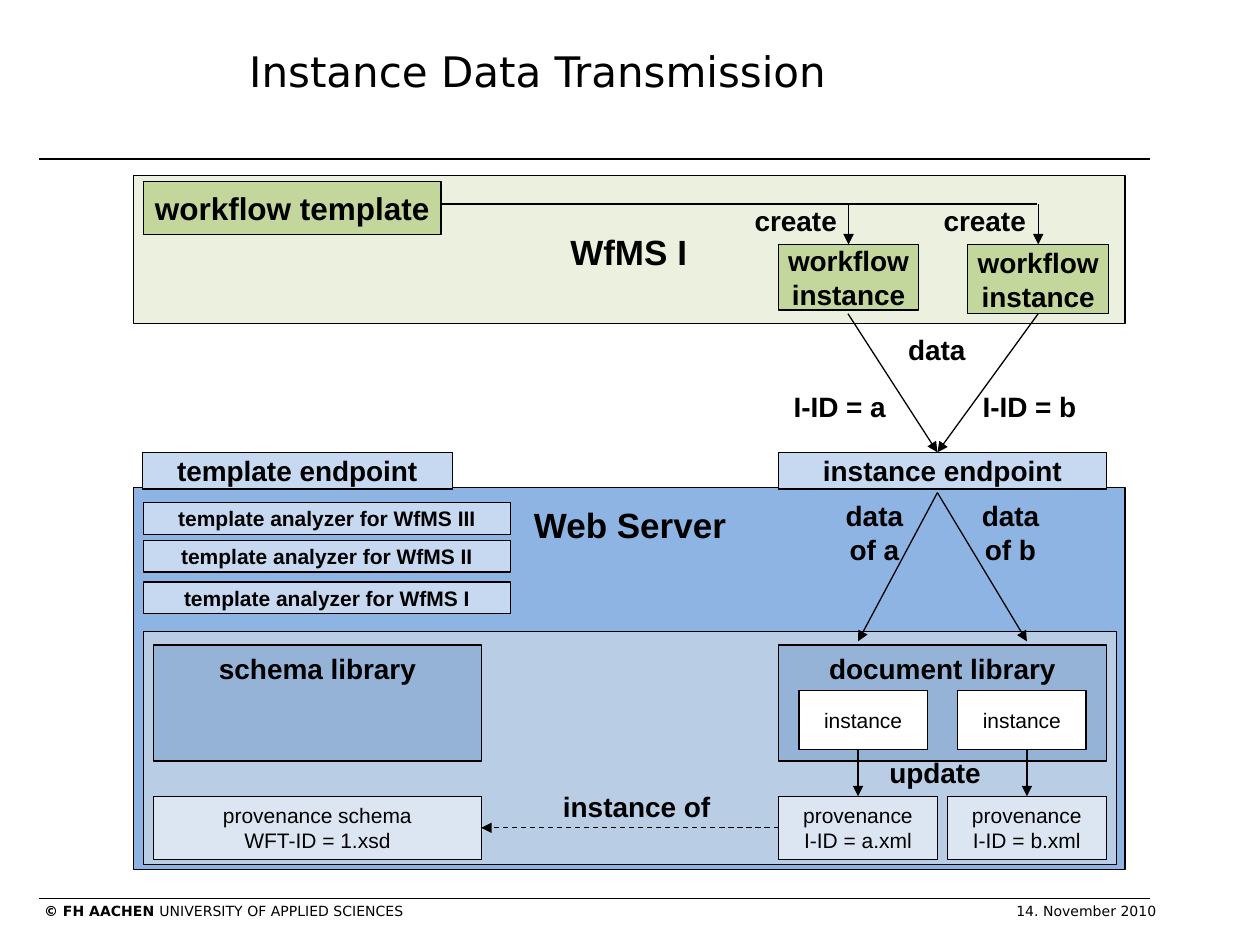
from lxml import etree
from pptx import Presentation
from pptx.dml.color import RGBColor
from pptx.enum.dml import MSO_LINE_DASH_STYLE as DASH
from pptx.enum.shapes import MSO_CONNECTOR, MSO_SHAPE
from pptx.enum.text import MSO_ANCHOR, PP_ALIGN
from pptx.oxml.ns import qn
from pptx.util import Inches, Pt

COLORS = {
    "black": "000000", "white": "FFFFFF",
    "wfms": "EBF1DE", "workflow": "C3D69B",
    "server": "8EB4E3", "endpoint": "C6D9F1",
    "store": "B9CDE5", "library": "95B3D7", "provenance": "DCE6F2",
}


def rgb(name):
    """Return the named colour."""
    return RGBColor.from_string(COLORS[name])


def add_run(p, text, size, bold, font="Arial"):
    """Append one formatted run to a paragraph."""
    r = p.add_run()
    r.text = text
    r.font.size, r.font.bold, r.font.name = Pt(size), bold, font
    r.font.color.rgb = rgb("black")


def add_box(s, x, y, w, h, fill, lines=(), size=16, bold=True,
            anchor=MSO_ANCHOR.MIDDLE):
    """Draw an outlined rectangle with one centred paragraph per line."""
    sp = s.shapes.add_shape(MSO_SHAPE.RECTANGLE, Inches(x), Inches(y), Inches(w), Inches(h))
    sp.shadow.inherit = False
    sp.fill.solid()
    sp.fill.fore_color.rgb = rgb(fill)
    sp.line.color.rgb = rgb("black")
    sp.line.width = Pt(0.75)
    tf = sp.text_frame
    tf.word_wrap = False
    tf.vertical_anchor = anchor
    for i, line in enumerate(lines):
        p = tf.add_paragraph() if i else tf.paragraphs[0]
        p.alignment = PP_ALIGN.CENTER
        add_run(p, line, size, bold)
    return sp


def add_label(s, x, y, w, h, lines, size=16, align=PP_ALIGN.LEFT, bold=True, font="Arial"):
    """Place a text box whose lines share one paragraph."""
    tf = s.shapes.add_textbox(Inches(x), Inches(y), Inches(w), Inches(h)).text_frame
    tf.word_wrap = True
    p = tf.paragraphs[0]
    p.alignment = align
    for i, line in enumerate(lines):
        if i:
            p.add_line_break()
        add_run(p, line, size, bold, font)


def add_line(s, x1, y1, x2, y2, width=0.75, arrow=True, dash=None, start=None, end=None):
    """Draw a line, joined to (shape, site) pairs where given."""
    c = s.shapes.add_connector(MSO_CONNECTOR.STRAIGHT, Inches(x1), Inches(y1),
                               Inches(x2), Inches(y2))
    c.line.color.rgb = rgb("black")
    c.line.width = Pt(width)
    if dash:
        c.line.dash_style = dash
    if arrow:
        etree.SubElement(c.line._get_or_add_ln(), qn("a:tailEnd"), type="triangle")
    etree.SubElement(c._element.spPr, qn("a:effectLst"))
    if start:
        c.begin_connect(*start)
    if end:
        c.end_connect(*end)


def add_frame(s, x, y, w, h):
    """Draw the title, the two rules and the footer line."""
    for dy in (1.26, 7.13):
        add_line(s, x, y + dy, x + w, y + dy, width=1, arrow=False)
    add_label(s, x + 1.57, y + 0.31, 7.26, 0.79, ["Instance Data Transmission"],
              24, bold=False, font="DejaVu Sans")
    tf = s.shapes.add_textbox(Inches(x + 0.04), Inches(y + h - 0.34),
                              Inches(9.06), Inches(0.14)).text_frame
    tf.word_wrap = True
    tf.margin_left = tf.margin_right = tf.margin_top = tf.margin_bottom = 0
    p = tf.paragraphs[0]
    tabs = etree.SubElement(p._p.get_or_add_pPr(), qn("a:tabLst"))
    etree.SubElement(tabs, qn("a:tab"), pos=str(Inches(8.83)), algn="r")
    add_run(p, "© FH AACHEN ", 8, True, "DejaVu Sans")
    add_run(p, "UNIVERSITY OF APPLIED SCIENCES\t14. November 2010", 8, False, "DejaVu Sans")


def add_wfms(s, x, y, w, h):
    """Draw the workflow system with its template and instances."""
    add_box(s, x, y, w, h, "wfms")
    add_label(s, x + 2.68, y + 0.39, 2.5, 0.43, ["WfMS I"], 20, PP_ALIGN.CENTER)
    add_box(s, x + 0.08, y + 0.05, 2.36, 0.42, "workflow", ["workflow template"], 18)
    bus = y + 0.23
    add_line(s, x + 2.44, bus, x + 7.17, bus, arrow=False)
    for dx, bw, bh in ((5.12, 1.11, 0.52), (6.62, 1.12, 0.55)):
        sp = add_box(s, x + dx, y + 0.55, bw, bh, "workflow", ["workflow", "instance"])
        mid = x + dx + bw / 2
        add_line(s, mid, bus, mid, y + 0.55, end=(sp, 0))
        add_label(s, x + dx - 0.29, y + 0.18, 1, 0.37, ["create"])
    return sp


def add_transmission(s, x, y, w, h, right_instance):
    """Draw the arrows from both instances down to the endpoint."""
    tip = x + 0.71
    add_line(s, x, y, tip, y + h)
    add_line(s, x + w, y, tip, y + h, start=(right_instance, 2))
    add_label(s, x + 0.08, y + 0.1, 1.25, 0.37, ["data"], align=PP_ALIGN.CENTER)
    for dx, name in ((-0.53, "a"), (0.97, "b")):
        add_label(s, x + dx, y + 0.55, 1, 0.37, [f"I-ID = {name}"])


def add_server(s, x, y, w, h):
    """Draw the web server, its endpoints and its analyzers."""
    add_box(s, x, y, w, h, "server")
    add_label(s, x + 2.69, y + 0.08, 2.5, 0.43, ["Web Server"], 20, PP_ALIGN.CENTER)
    for dx, bw, name in ((0.07, 2.46, "template"), (5.12, 2.6, "instance")):
        add_box(s, x + dx, y - 0.28, bw, 0.29, "endpoint", [f"{name} endpoint"])
    for dy, number in ((0.12, "III"), (0.42, "II"), (0.75, "I")):
        add_box(s, x + 0.08, y + dy, 2.91, 0.25, "endpoint",
                [f"template analyzer for WfMS {number}"], 12)
    add_store(s, x + 0.08, y + 1.14, w - 0.15, 1.85)
    for tip, dx, name in ((5.75, 5.38, "a"), (7.09, 6.46, "b")):
        add_line(s, x + 6.38, y + 0.04, x + tip, y + 1.22)
        add_label(s, x + dx, y + 0.04, 1, 0.64, ["data", f"of {name}"],
                  align=PP_ALIGN.CENTER)


def add_store(s, x, y, w, h):
    """Draw the libraries and the provenance files below them."""
    add_box(s, x, y, w, h, "store")
    left, right, low = x + 0.08, x + 5.04, y + 1.31
    for bx, name in ((left, "schema"), (right, "document")):
        add_box(s, bx, y + 0.11, 2.6, 0.92, "library", [f"{name} library"],
                anchor=MSO_ANCHOR.TOP)
    schema = add_box(s, left, low, 2.6, 0.5, "provenance",
                     ["provenance schema", "WFT-ID = 1.xsd"], 12, False)
    files = []
    for dx, inset, name in ((0, 0.16, "a"), (1.34, 0.08, "b")):
        add_box(s, right + dx + inset, y + 0.47, 1.02, 0.47, "white", ["instance"], 12, False)
        sp = add_box(s, right + dx, low, 1.26, 0.5, "provenance",
                     ["provenance", f"I-ID = {name}.xml"], 12, False)
        mid = right + dx + 0.63
        add_line(s, mid, y + 0.94, mid, low, end=(sp, 0))
        files.append(sp)
    add_line(s, right, low + 0.25, left + 2.6, low + 0.25, dash=DASH.DASH,
             start=(files[0], 1), end=(schema, 3))
    add_label(s, x + 3.23, y + 1.21, 1.5, 0.37, ["instance of"])
    add_label(s, x + 5.82, y + 0.94, 1.5, 0.37, ["update"])


def main():
    """Build and save the slide."""
    prs = Presentation()
    prs.slide_width, prs.slide_height = Inches(10), Inches(7.5)
    s = prs.slides.add_slide(prs.slide_layouts[6])
    add_frame(s, 0.31, 0, 8.82, 7.5)
    right_instance = add_wfms(s, 1.06, 1.39, 7.87, 1.18)
    add_server(s, 1.06, 3.87, 7.87, 3.03)
    add_transmission(s, 6.73, 2.49, 1.5, 1.1, right_instance)
    prs.save("out.pptx")


if __name__ == "__main__":
    main()
